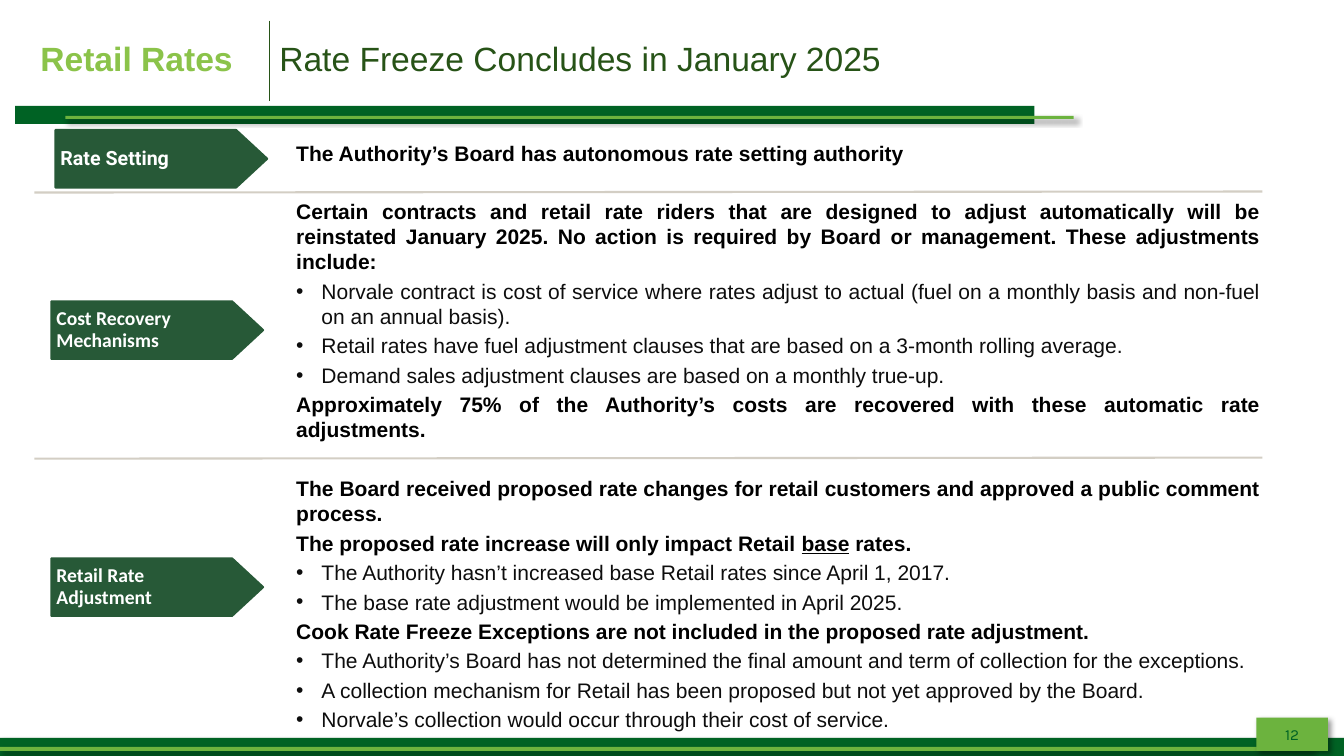
from lxml import etree
from pptx import Presentation
from pptx.dml.color import RGBColor
from pptx.enum.shapes import MSO_CONNECTOR as Connector, MSO_SHAPE as Preset
from pptx.enum.text import MSO_ANCHOR as Anchor, PP_ALIGN as Align
from pptx.oxml.ns import qn
from pptx.util import Pt

EMU_PER_PX = 9144
DARK, LIGHT, LABEL, TITLE = "006224", "6CB33E", "275937", "275317"
BLACK, BODY, WHITE = "000000", "0D0D0D", "FFFFFF"

BARS = [
    ((15, 105, 1011, 18), DARK, False),
    ((65, 115, 1000, 3), LIGHT, True),
    ((-1, 732, 1336, 25), DARK, True),
    ((-1, 741, 1300, 4), LIGHT, True),
]
LABELS = [
    ("Rate Setting", 55, 129, "Roboto"),
    ("Cost Recovery Mechanisms", 51, 299, "Calibri"),
    ("Retail Rate Adjustment", 51, 554, "Calibri"),
]
SECTIONS = [
    ((284, 134, 976, 40), [
        ("head", ["The Authority’s Board has autonomous rate setting authority"]),
    ]),
    ((284, 192, 976, 255), [
        ("head", ["Certain contracts and retail rate riders that are designed to adjust "
                  "automatically will be reinstated January 2025. No action is required "
                  "by Board or management. These adjustments include:"]),
        ("bullet", ["Norvale contract is cost of service where rates adjust to actual "
                    "(fuel on a monthly basis and non-fuel on an annual basis)."]),
        ("bullet", ["Retail rates have fuel adjustment clauses that are based on a "
                    "3-month rolling average."]),
        ("bullet", ["Demand sales adjustment clauses are based on a monthly true-up."]),
        ("head", ["Approximately 75% of the Authority’s costs are recovered with these "
                  "automatic rate adjustments."]),
    ]),
    ((284, 467, 976, 262), [
        ("head", ["The Board received proposed rate changes for retail customers and "
                  "approved a public comment process."]),
        ("head", ["The proposed rate increase will only impact Retail ", "base", " rates."]),
        ("bullet", ["The Authority hasn’t increased base Retail rates since April 1, 2017."]),
        ("bullet", ["The base rate adjustment would be implemented in April 2025."]),
        ("head", ["Cook Rate Freeze Exceptions are not included in the proposed rate "
                  "adjustment."]),
        ("bullet", ["The Authority’s Board has not determined the final amount and term of "
                    "collection for the exceptions."]),
        ("bullet", ["A collection mechanism for Retail has been proposed but not yet "
                    "approved by the Board."]),
        ("bullet", ["Norvale’s collection would occur through their cost of service."]),
    ]),
]


def px(*lengths):
    """Turn pixel lengths into EMU."""
    return [length * EMU_PER_PX for length in lengths]


def rgb(code):
    """Turn a hex string into a colour."""
    return RGBColor.from_string(code)


def add_span(para, text, font, size, color, bold=False, underline=False):
    """Add one formatted run to a paragraph."""
    span = para.add_run()
    span.text = text
    span.font.name, span.font.size = font, Pt(size)
    span.font.bold, span.font.underline = bold, underline
    span.font.color.rgb = rgb(color)


def set_frame(frame, insets, anchor):
    """Set wrapping, insets and anchor of a text frame."""
    frame.word_wrap = True
    frame.margin_left, frame.margin_top, frame.margin_right, frame.margin_bottom = px(*insets)
    frame.vertical_anchor = anchor


def add_shadow(shape):
    """Give a shape a soft shadow to the lower right."""
    effects = shape._element.spPr.find(qn("a:effectLst"))
    shadow = etree.SubElement(effects, qn("a:outerShdw"), blurRad=str(Pt(4)),
                              dist=str(Pt(3)), dir="2700000", algn="tl", rotWithShape="0")
    color = etree.SubElement(shadow, qn("a:srgbClr"), val=BLACK)
    etree.SubElement(color, qn("a:alpha"), val="40000")


def add_block(page, preset, place, fill, shadow=False):
    """Add a filled preset shape without an outline."""
    block = page.shapes.add_shape(preset, *px(*place))
    block.shadow.inherit = False
    block.fill.solid()
    block.fill.fore_color.rgb = rgb(fill)
    block.line.fill.background()
    if shadow:
        add_shadow(block)
    return block


def add_page_number(page, number):
    """Add the page number tab at the lower right."""
    tab = add_block(page, Preset.RECTANGLE, (1246, 712, 71, 33), LIGHT, True)
    set_frame(tab.text_frame, (10, 5, 10, 5), Anchor.MIDDLE)
    para = tab.text_frame.paragraphs[0]
    para.alignment = Align.CENTER
    add_span(para, number, "Karla", 11, DARK)


def add_label(page, text, left, top, font):
    """Add an arrow-shaped section label."""
    label = add_block(page, Preset.PENTAGON, (left, top, 210, 57), LABEL)
    label.adjustments[0] = 0.54
    label.line.color.rgb = rgb(LABEL)
    label.line.width = Pt(1.5)
    set_frame(label.text_frame, (5, 0, 5, 0), Anchor.MIDDLE)
    para = label.text_frame.paragraphs[0]
    para.alignment = Align.LEFT
    para.line_spacing = 0.9
    add_span(para, text, font, 14, WHITE, bold=True)


def add_divider(page, start, end):
    """Add a thin line between two sections."""
    rule = page.shapes.add_connector(Connector.STRAIGHT, *px(*start, *end))
    rule.line.color.rgb = rgb("D3CEC4")
    rule.line.width = Pt(1.5)
    etree.SubElement(rule._element.spPr, qn("a:effectLst"))


def set_bullet(para):
    """Give a paragraph a hanging bullet."""
    props = para._p.get_or_add_pPr()
    indent = px(25)[0]
    props.set("marL", str(indent))
    props.set("indent", str(-indent))
    etree.SubElement(props, qn("a:buFont"), typeface="Arial")
    etree.SubElement(props, qn("a:buChar"), char="•")


def add_section(page, place, lines):
    """Add a justified text box of headings and bullets."""
    box = page.shapes.add_textbox(*px(*place))
    frame = box.text_frame
    set_frame(frame, (10, 5, 10, 5), Anchor.TOP)
    for index, (kind, texts) in enumerate(lines):
        para = frame.paragraphs[0] if index == 0 else frame.add_paragraph()
        is_head = kind == "head"
        if not is_head:
            set_bullet(para)
        para.alignment = Align.JUSTIFY
        para.space_before = Pt(3 if index else 0)
        for text in texts:
            add_span(para, text, "Arial", 15, BLACK if is_head else BODY,
                     bold=is_head, underline=text == "base")


def set_border(cell, side, color, width):
    """Draw one side of a table cell."""
    line = etree.SubElement(cell._tc.get_or_add_tcPr(), qn(f"a:{side}"), w=str(Pt(width)))
    fill = etree.SubElement(line, qn("a:solidFill"))
    etree.SubElement(fill, qn("a:srgbClr"), val=color)


def add_heading(page):
    """Add the two-cell heading table."""
    table = page.shapes.add_table(1, 2, *px(30, 21, 970, 77)).table
    table.first_row = table.horz_banding = False
    columns = [
        ("Retail Rates", 237, "8BC34A", True, WHITE, TITLE),
        ("Rate Freeze Concludes in January 2025", 733, TITLE, False, TITLE, WHITE),
    ]
    for index, (text, width, color, bold, left, right) in enumerate(columns):
        table.columns[index].width = px(width)[0]
        cell = table.cell(0, index)
        cell.vertical_anchor = Anchor.MIDDLE
        for side, edge, weight in (("lnL", left, 1), ("lnR", right, 1),
                                   ("lnT", WHITE, 1), ("lnB", WHITE, 3)):
            set_border(cell, side, edge, weight)
        cell.fill.background()
        add_span(cell.text_frame.paragraphs[0], text, "Arial", 24, color, bold)


def main():
    """Build the slide and save it."""
    deck = Presentation()
    deck.slide_width, deck.slide_height = px(1333, 750)
    page = deck.slides.add_slide(deck.slide_layouts[6])
    for place, fill, shadow in BARS:
        add_block(page, Preset.RECTANGLE, place, fill, shadow)
    add_page_number(page, "12")
    for label in LABELS:
        add_label(page, *label)
    for top in (191, 455):
        add_divider(page, (34, top), (1252, top - 1))
    for place, lines in SECTIONS:
        add_section(page, place, lines)
    add_heading(page)
    deck.save("out.pptx")


if __name__ == "__main__":
    main()
